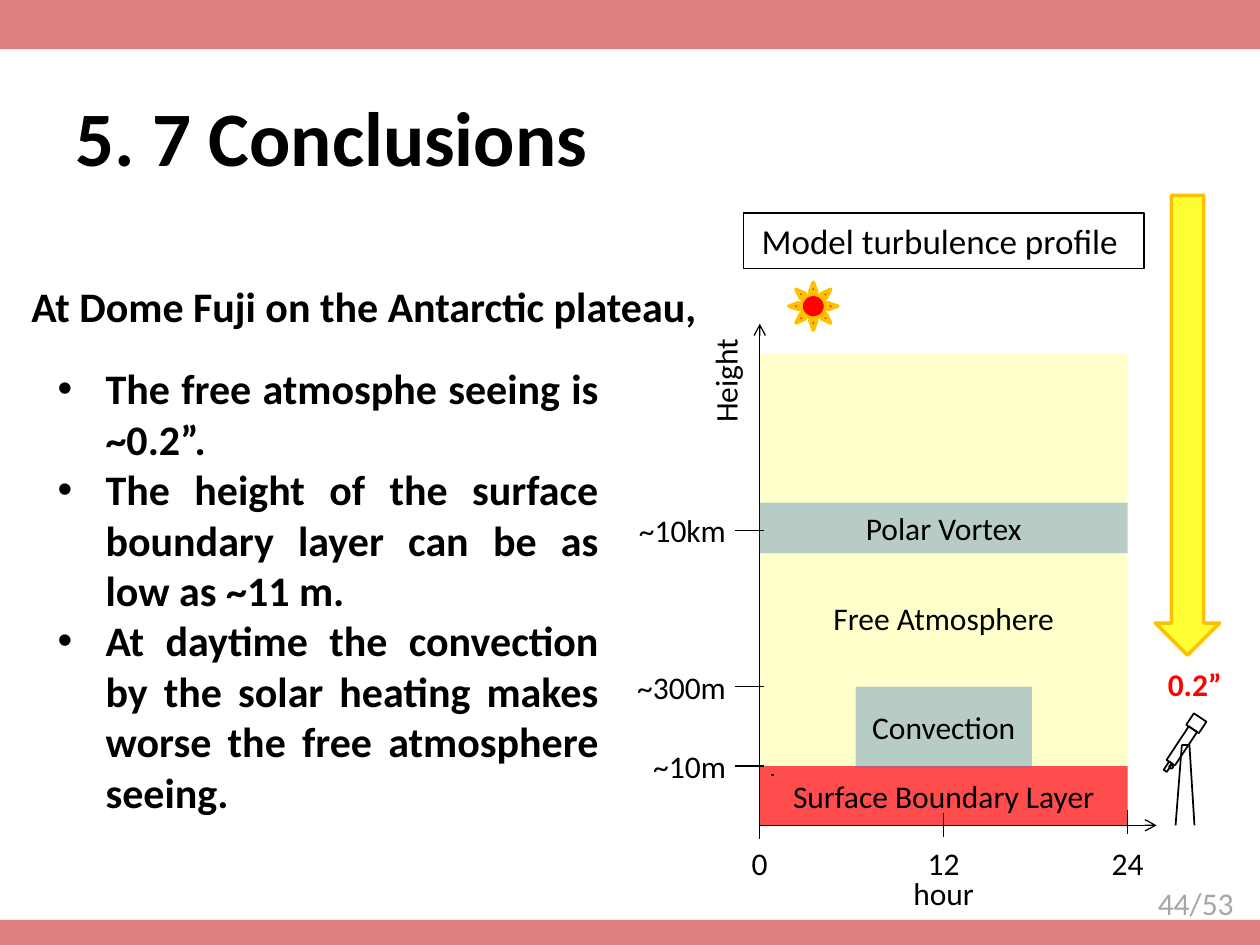
from lxml.etree import SubElement
from pptx import Presentation
from pptx.dml.color import RGBColor
from pptx.enum.shapes import MSO_CONNECTOR, MSO_SHAPE
from pptx.enum.text import MSO_ANCHOR, PP_ALIGN
from pptx.oxml.ns import qn
from pptx.util import Inches, Pt

BLACK = RGBColor(0x00, 0x00, 0x00)
GRAY = RGBColor(0xA6, 0xA6, 0xA6)
CRIMSON = RGBColor(0xC0, 0x00, 0x00)
RED = RGBColor(0xFF, 0x00, 0x00)
YELLOW = RGBColor(0xFF, 0xFF, 0x00)
ORANGE = RGBColor(0xFF, 0xC0, 0x00)
BLUE = RGBColor(0x4F, 0x81, 0xBD)
FONT = "Calibri"

AXIS_X, AXIS_Y = 6.03, 6.55
PLOT_WIDTH = 2.92

CONCLUSIONS = [
    "The free atmosphe seeing is ~0.2”. ",
    "The height of the surface boundary layer can be as low as ~11 m.",
    "At daytime the convection by the solar heating makes worse the free atmosphere seeing.",
]


def write_paragraph(paragraph, text, size, color=BLACK, bold=False, align=PP_ALIGN.LEFT):
    paragraph.text = text
    paragraph.alignment = align
    for run in paragraph.runs:
        run.font.name = FONT
        run.font.size = Pt(size)
        run.font.bold = bold
        run.font.color.rgb = color


def add_text(slide, box, text, size=18, wrap=True, anchor=MSO_ANCHOR.TOP, **style):
    shape = slide.shapes.add_textbox(*map(Inches, box))
    shape.text_frame.word_wrap = wrap
    shape.text_frame.vertical_anchor = anchor
    write_paragraph(shape.text_frame.paragraphs[0], text, size, **style)
    return shape


def add_shape(shapes, kind, box, fill=None, opacity=100, line=None, width=1, rotation=0):
    shape = shapes.add_shape(kind, *map(Inches, box))
    shape.shadow.inherit = False
    shape.rotation = rotation
    if fill is None:
        shape.fill.background()
    else:
        shape.fill.solid()
        shape.fill.fore_color.rgb = fill
        if opacity < 100:
            color = shape.fill._xPr.find(qn("a:solidFill"))[0]
            SubElement(color, qn("a:alpha"), val=str(opacity * 1000))
    if line is None:
        shape.line.fill.background()
    else:
        shape.line.color.rgb = line
        shape.line.width = Pt(width)
    return shape


def add_layer(slide, box, text, fill, opacity, top_margin=0.05):
    shape = add_shape(slide.shapes, MSO_SHAPE.RECTANGLE, box, fill, opacity)
    frame = shape.text_frame
    frame.word_wrap = True
    frame.vertical_anchor = MSO_ANCHOR.MIDDLE
    frame.margin_top = Inches(top_margin)
    write_paragraph(frame.paragraphs[0], text, 18, align=PP_ALIGN.CENTER)


def add_line(shapes, start, end, width=0.75, arrow=False):
    connector = shapes.add_connector(MSO_CONNECTOR.STRAIGHT, *map(Inches, start + end))
    connector.line.color.rgb = BLACK
    connector.line.width = Pt(width)
    if arrow:
        SubElement(connector.line._get_or_add_ln(), qn("a:tailEnd"), type="arrow")
    SubElement(connector._element.spPr, qn("a:effectLst"))


def add_conclusions(slide):
    shape = slide.shapes.add_textbox(*map(Inches, (0.36, 2.81, 4.49, 3.74)))
    frame = shape.text_frame
    frame.word_wrap = True
    frame.vertical_anchor = MSO_ANCHOR.MIDDLE
    for index, text in enumerate(CONCLUSIONS):
        paragraph = frame.add_paragraph() if index else frame.paragraphs[0]
        write_paragraph(paragraph, text, 24, bold=True, align=PP_ALIGN.JUSTIFY)
        properties = paragraph._p.get_or_add_pPr()
        properties.set("marL", str(Inches(0.38)))
        properties.set("indent", str(-Inches(0.38)))
        SubElement(properties, qn("a:buFont"), typeface="Arial")
        SubElement(properties, qn("a:buChar"), char="•")


def add_profile(slide):
    shapes = slide.shapes
    add_layer(slide, (AXIS_X, 6.08, PLOT_WIDTH, 0.47), "Surface Boundary Layer", RED, 70)
    add_line(shapes, (AXIS_X, AXIS_Y), (AXIS_X, 2.57), arrow=True)
    add_line(shapes, (AXIS_X, AXIS_Y), (9.18, AXIS_Y), arrow=True)
    add_text(slide, (5.27, 2.77, 0.97, 0.4), "Height").rotation = 270
    add_line(shapes, (6.12, 6.15), (6.14, 6.15))
    add_layer(slide, (AXIS_X, 2.81, PLOT_WIDTH, 3.27), "Free Atmosphere", YELLOW, 20, 0.96)
    add_layer(slide, (AXIS_X, 3.99, PLOT_WIDTH, 0.4), "Polar Vortex", BLUE, 40)
    add_layer(slide, (6.79, 5.45, 1.4, 0.64), "Convection", BLUE, 40)

    for label, y in (("~10km", 4.21), ("~300m", 5.45), ("~10m", 6.08)):
        add_line(shapes, (6.06, y), (5.83, y))
        add_text(slide, (4.69, y - 0.2, 1.17, 0.4), label, align=PP_ALIGN.RIGHT)

    for index, (label, top) in enumerate((("0", 6.47), ("12", 6.45), ("24", 6.43))):
        x = AXIS_X + index * PLOT_WIDTH / 2
        add_line(shapes, (x, top), (x, top + 0.19))
        add_text(slide, (x - 0.23, 6.65, 0.46, 0.4), label, wrap=False, align=PP_ALIGN.CENTER)
    add_text(slide, (7.15, 6.89, 0.69, 0.4), "hour", wrap=False)

    heading = add_shape(shapes, MSO_SHAPE.RECTANGLE, (5.9, 1.69, 3.18, 0.44), line=BLACK, width=0.75)
    heading.text_frame.word_wrap = False
    heading.text_frame.vertical_anchor = MSO_ANCHOR.TOP
    write_paragraph(heading.text_frame.paragraphs[0], "Model turbulence profile ", 20,
                    align=PP_ALIGN.CENTER)


def add_telescope(slide):
    shapes = slide.shapes.add_group_shape().shapes
    parts = [
        (MSO_SHAPE.RECTANGLE, (9.44, 5.68, 0.11, 0.12)),
        (MSO_SHAPE.RECTANGLE, (9.23, 6.07, 0.08, 0.03)),
        (MSO_SHAPE.OVAL, (9.28, 6.07, 0.03, 0.03)),
        (MSO_SHAPE.RECTANGLE, (9.22, 5.88, 0.32, 0.08)),
    ]
    for kind, box in parts:
        add_shape(shapes, kind, box, line=BLACK, rotation=303.5)
    tripod = [(9.33, 6.55), (9.38, 5.91), (9.44, 5.91), (9.48, 6.55)]
    for start, end in zip(tripod, tripod[1:]):
        add_line(shapes, start, end, width=1)


def main():
    presentation = Presentation()
    presentation.slide_width = Inches(10)
    presentation.slide_height = Inches(7.5)
    slide = presentation.slides.add_slide(presentation.slide_layouts[6])

    add_text(slide, (9.09, 6.97, 0.85, 0.4), "44/53", wrap=False, color=GRAY)
    for top, height in ((7.3, 0.2), (0, 0.39)):
        add_shape(slide.shapes, MSO_SHAPE.RECTANGLE, (0, top, 10, height), CRIMSON, 50)
    add_text(slide, (0.5, 0.45, 9, 1.25), "5. 7 Conclusions", 44,
             anchor=MSO_ANCHOR.MIDDLE, bold=True)
    add_profile(slide)
    add_conclusions(slide)
    add_text(slide, (0.15, 2.18, 5.64, 0.5), "At Dome Fuji on the Antarctic plateau,", 24, bold=True)
    add_telescope(slide)
    add_shape(slide.shapes, MSO_SHAPE.DOWN_ARROW, (9.17, 1.55, 0.51, 3.65), YELLOW, 80, ORANGE, 2)
    add_text(slide, (9.17, 5.23, 0.63, 0.4), "0.2”", wrap=False, color=RED, bold=True)
    add_shape(slide.shapes, MSO_SHAPE.SUN, (6.26, 2.24, 0.39, 0.38), RED, line=ORANGE, width=2)
    presentation.save("out.pptx")


if __name__ == "__main__":
    main()
